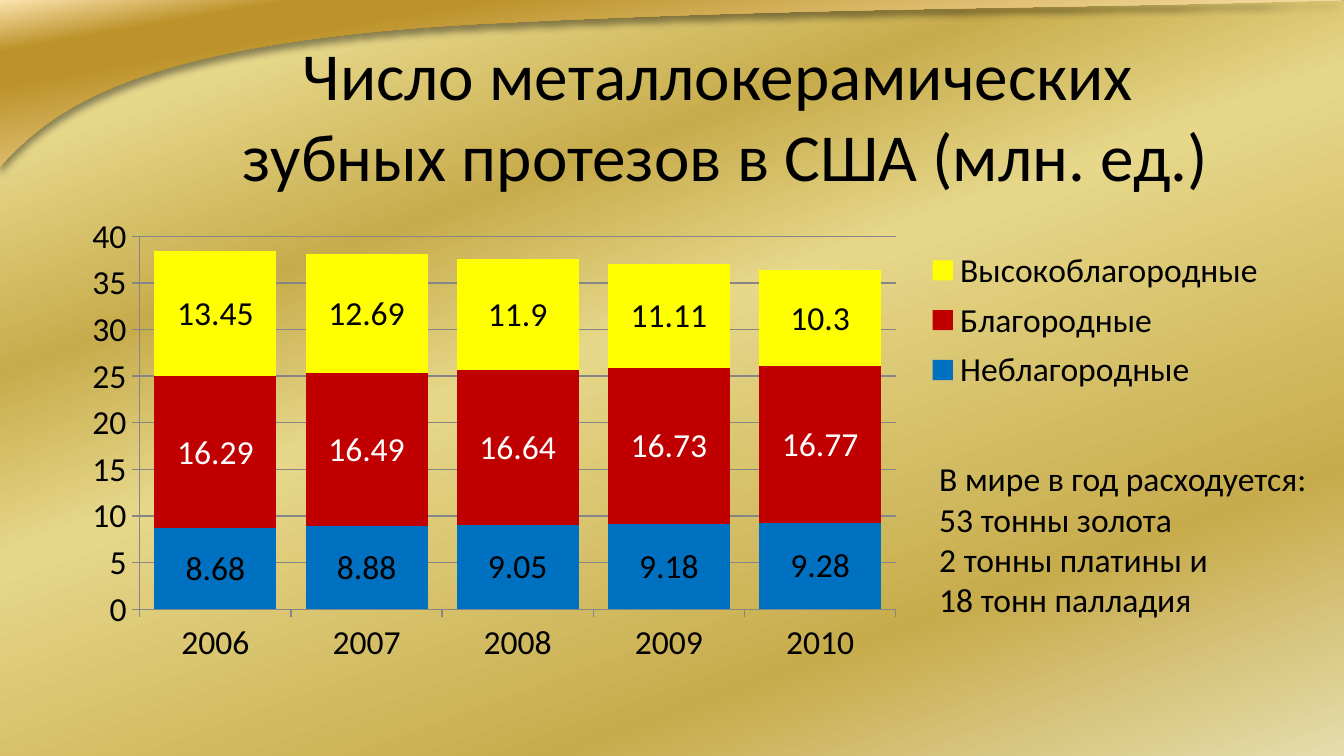
import lxml.etree
import pptx
import pptx.chart.data
import pptx.dml.color
import pptx.enum.chart
import pptx.enum.text
import pptx.oxml
import pptx.oxml.ns
import pptx.util
from pptx.util import Inches

RGBColor = pptx.dml.color.RGBColor
BLACK = RGBColor(0x00, 0x00, 0x00)
WHITE = RGBColor(0xFF, 0xFF, 0xFF)
GREY = RGBColor(0x86, 0x86, 0x86)
BLUE = RGBColor(0x00, 0x70, 0xC0)
RED = RGBColor(0xC0, 0x00, 0x00)
YELLOW = RGBColor(0xFF, 0xFF, 0x00)

# Gradient stops: position in percent, colour
PALE, LIGHT, GOLD = (RGBColor(0xE6, 0xDC, 0xAC), RGBColor(0xE6, 0xD7, 0x8A),
                     RGBColor(0xC7, 0xAC, 0x4C))
CREAM, AMBER, BROWN = (RGBColor(0xFB, 0xE4, 0xAE), RGBColor(0xBD, 0x92, 0x2A),
                       RGBColor(0x83, 0x5E, 0x17))
OLIVE, IVORY = RGBColor(0xA2, 0x89, 0x49), RGBColor(0xFA, 0xE3, 0xB7)
BACKDROP_STOPS = [(0, PALE), (12, LIGHT), (30, GOLD), (45, LIGHT), (77, GOLD), (100, PALE)]
DRAPE_STOPS = [(0, CREAM), (13, AMBER), (21, AMBER), (63, CREAM), (67, AMBER),
               (69, BROWN), (82, OLIVE), (100, IVORY)]

# Lower edge of the drape: Bezier curves that share their end points
DRAPE_CURVES = [
    [(0, 1.24), (0.4, 0.8), (1.02, 0.32), (3.53, 0.18)],
    [(3.53, 0.18), (6.04, 0.05), (7.78, 0.07), (10, 0)],
]

YEARS = ["2006", "2007", "2008", "2009", "2010"]
ALLOYS = [
    ("Неблагородные", [8.68, 8.88, 9.05, 9.18, 9.28], BLUE, BLACK),
    ("Благородные", [16.29, 16.49, 16.64, 16.73, 16.77], RED, WHITE),
    ("Высокоблагородные", [13.45, 12.69, 11.9, 11.11, 10.3], YELLOW, BLACK),
]
CONSUMPTION = ["В мире в год расходуется:", "53 тонны золота",
               "2 тонны платины и", "18 тонн палладия"]


def apply_format(target, values):
    for name, value in values.items():
        setattr(target, name, value)


def style_font(font, size, color=BLACK):
    apply_format(font, {"name": "Calibri", "size": pptx.util.Pt(size), "bold": False})
    font.color.rgb = color


def fill_gradient(fill, holder, stops, angle):
    """Give a fill any number of stops and a clockwise angle in degrees."""
    fill.gradient()
    gradient = next(holder.iter(pptx.oxml.ns.qn("a:gradFill")))
    stop_list = gradient.find(pptx.oxml.ns.qn("a:gsLst"))
    for stop in list(stop_list):
        stop_list.remove(stop)
    for position, color in stops:
        stop = lxml.etree.SubElement(stop_list, pptx.oxml.ns.qn("a:gs"), pos=str(position * 1000))
        lxml.etree.SubElement(stop, pptx.oxml.ns.qn("a:srgbClr"), val=str(color))
    gradient.find(pptx.oxml.ns.qn("a:lin")).set("ang", str(angle * 60000))


def curve_points(controls, steps=30):
    for step in range(1, steps + 1):
        t = step / steps
        weights = [(1 - t) ** 3, 3 * t * (1 - t) ** 2, 3 * t ** 2 * (1 - t), t ** 3]
        yield tuple(sum(w * point[axis] for w, point in zip(weights, controls))
                    for axis in (0, 1))


def add_drape(slide):
    edge = [point for controls in DRAPE_CURVES for point in curve_points(controls)]
    outline = [(Inches(x), Inches(y)) for x, y in [(0, 0), (0, 1.24)] + edge]
    builder = slide.shapes.build_freeform(Inches(10), 0)
    builder.add_line_segments(outline, close=True)
    drape = builder.convert_to_shape()
    drape.line.fill.background()
    fill_gradient(drape.fill, drape.element.spPr, DRAPE_STOPS, 80)
    drape.shadow.inherit = False
    effects = drape.element.spPr.find(pptx.oxml.ns.qn("a:effectLst"))
    effects.append(pptx.oxml.parse_xml(
        f'<a:outerShdw {pptx.oxml.ns.nsdecls("a")} blurRad="50800" dist="38100" dir="5400000">'
        '<a:srgbClr val="000000"><a:alpha val="40000"/></a:srgbClr></a:outerShdw>'))
    # The drape lies behind the title
    slide.shapes.title.element.addprevious(drape.element)


def set_title(slide):
    title = slide.shapes.title
    apply_format(title, {"left": Inches(1.3), "top": Inches(0.38),
                         "width": Inches(8.2), "height": Inches(0.94)})
    frame = title.text_frame
    frame.text = "Число металлокерамических \vзубных протезов в США (млн. ед.)"
    apply_format(frame, {"auto_size": pptx.enum.text.MSO_AUTO_SIZE.NONE, "word_wrap": True,
                         "vertical_anchor": pptx.enum.text.MSO_ANCHOR.MIDDLE})
    heading = frame.paragraphs[0]
    heading.alignment = pptx.enum.text.PP_ALIGN.CENTER
    for run in heading.runs:
        style_font(run.font, 36)


def manual_layout(x, y, w, h, inner=False):
    target = '<c:layoutTarget val="inner"/>' if inner else ""
    modes = '<c:xMode val="edge"/><c:yMode val="edge"/>'
    sizes = "".join(f'<c:{name} val="{value}"/>'
                    for name, value in zip("xywh", (x, y, w, h)))
    return pptx.oxml.parse_xml(
        f'<c:layout {pptx.oxml.ns.nsdecls("c")}><c:manualLayout>'
        f'{target}{modes}{sizes}</c:manualLayout></c:layout>')


def place_part(chart, tag, index, layout):
    """Set the manual layout of the plot area or the legend."""
    part = next(chart.element.iter(pptx.oxml.ns.qn(tag)))
    for old_layout in part.findall(pptx.oxml.ns.qn("c:layout")):
        part.remove(old_layout)
    part.insert(index, layout)


def add_prosthesis_chart(slide):
    data = pptx.chart.data.CategoryChartData()
    data.categories = YEARS
    for name, values, _, _ in ALLOYS:
        data.add_series(name, values)
    chart = slide.shapes.add_chart(
        pptx.enum.chart.XL_CHART_TYPE.COLUMN_STACKED,
        Inches(0.5), Inches(1.55), Inches(9), Inches(3.47), data).chart
    style_font(chart.font, 18)
    chart.has_title = False

    # Columns and their values
    columns = chart.plots[0]
    apply_format(columns, {"gap_width": 24, "overlap": 100, "vary_by_categories": False})
    for series, (_, _, color, label_color) in zip(columns.series, ALLOYS):
        series.format.fill.solid()
        series.format.fill.fore_color.rgb = color
        labels = series.data_labels
        labels.show_value = True
        style_font(labels.font, 18, label_color)

    # Axes
    for axis in (chart.category_axis, chart.value_axis):
        axis.major_tick_mark = pptx.enum.chart.XL_TICK_MARK.OUTSIDE
        axis.format.line.color.rgb = GREY
    apply_format(chart.value_axis, {"minimum_scale": 0, "maximum_scale": 40, "major_unit": 5,
                                    "has_major_gridlines": True})
    chart.value_axis.major_gridlines.format.line.color.rgb = GREY

    # Legend and plot positions
    chart.has_legend = True
    apply_format(chart.legend, {"position": pptx.enum.chart.XL_LEGEND_POSITION.RIGHT,
                                "include_in_layout": False})
    style_font(chart.legend.font, 18)
    place_part(chart, "c:plotArea", 0, manual_layout(0.06, 0.06, 5 / 8, 0.8, inner=True))
    place_part(chart, "c:legend", 1, manual_layout(0.71, 0.07, 0.28, 0.34))


def add_consumption_note(slide):
    note = slide.shapes.add_textbox(Inches(6.89), Inches(3.36), Inches(2.97), Inches(1.31))
    frame = note.text_frame
    frame.text = "\n".join(CONSUMPTION)
    apply_format(frame, {"word_wrap": False,
                         "auto_size": pptx.enum.text.MSO_AUTO_SIZE.SHAPE_TO_FIT_TEXT})
    for paragraph in frame.paragraphs:
        style_font(paragraph.runs[0].font, 18)


def main():
    deck = pptx.Presentation()
    # A 16:9 slide
    apply_format(deck, {"slide_width": Inches(10), "slide_height": Inches(10) * 9 // 16})
    slide = deck.slides.add_slide(deck.slide_layouts[5])
    fill_gradient(slide.background.fill, slide.element, BACKDROP_STOPS, 70)
    set_title(slide)
    add_drape(slide)
    add_prosthesis_chart(slide)
    add_consumption_note(slide)
    deck.save("out.pptx")


if __name__ == "__main__":
    main()
